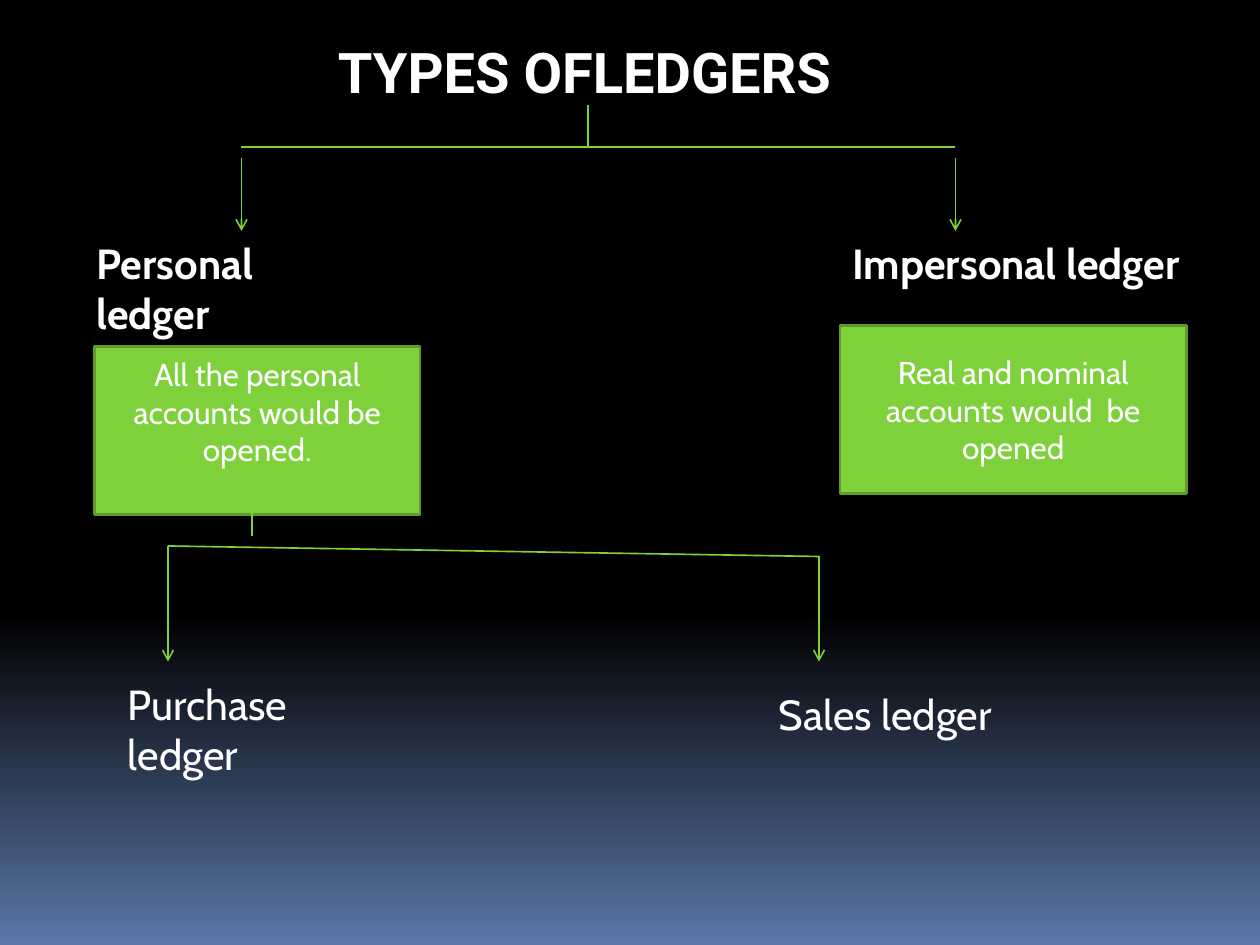
import pptx
import pptx.dml.color
import pptx.enum.shapes
import pptx.enum.text
import pptx.oxml.ns
import pptx.util
from lxml import etree

COLORS = {
    "night": "000000",
    "dusk": "5B77A8",
    "text": "FFFFFF",
    "green": "7FD13B",
    "edge": "5E9B2C",
}
COLUMNS, ROWS = 120, 90


def color(name):
    return pptx.dml.color.RGBColor.from_string(COLORS[name])


class LedgerSlide:
    """Draws on one slide; lengths are columns and rows of the grid."""

    def __init__(self, deck):
        self.page = deck.slides.add_slide(deck.slide_layouts[6])
        self.column = deck.slide_width / COLUMNS
        self.row = deck.slide_height / ROWS

    def place(self, *lengths):
        """Turn alternating columns and rows into slide units."""
        units = (self.column, self.row)
        return [round(length * units[i % 2]) for i, length in enumerate(lengths)]

    def background(self):
        fill = self.page.background.fill
        fill.gradient()
        fill.gradient_angle = 270
        stops = ((0.65, "night"), (1, "dusk"))
        for stop, (position, name) in zip(fill.gradient_stops, stops):
            stop.position = position
            stop.color.rgb = color(name)

    def set_text(self, frame, text, size, font="Cabin", bold=False):
        frame.word_wrap = True
        para = frame.paragraphs[0]
        para.text = text
        para.font.name = font
        para.font.size = pptx.util.Pt(size)
        para.font.bold = bold
        para.font.color.rgb = color("text")
        return para

    def label(self, text, area, size=24, **style):
        box = self.page.shapes.add_textbox(*self.place(*area))
        self.set_text(box.text_frame, text, size, **style)
        box.text_frame.auto_size = pptx.enum.text.MSO_AUTO_SIZE.SHAPE_TO_FIT_TEXT

    def note(self, text, area, bottom=0.05):
        box = self.page.shapes.add_shape(
            pptx.enum.shapes.MSO_SHAPE.RECTANGLE, *self.place(*area))
        box.shadow.inherit = False
        box.fill.solid()
        box.fill.fore_color.rgb = color("green")
        box.line.color.rgb = color("edge")
        box.line.width = pptx.util.Pt(1.5)
        frame = box.text_frame
        frame.vertical_anchor = pptx.enum.text.MSO_ANCHOR.MIDDLE
        frame.margin_bottom = pptx.util.Inches(bottom)
        para = self.set_text(frame, text, 18)
        para.alignment = pptx.enum.text.PP_ALIGN.CENTER

    def line(self, *ends, arrow=False):
        line = self.page.shapes.add_connector(
            pptx.enum.shapes.MSO_CONNECTOR.STRAIGHT, *self.place(*ends))
        line.line.color.rgb = color("green")
        line.line.width = pptx.util.Pt(0.94)
        properties = line._element.spPr
        if arrow:
            outline = properties.find(pptx.oxml.ns.qn("a:ln"))
            etree.SubElement(outline, pptx.oxml.ns.qn("a:tailEnd"), type="arrow")
        etree.SubElement(properties, pptx.oxml.ns.qn("a:effectLst"))


def main():
    deck = pptx.Presentation()
    deck.slide_width = pptx.util.Inches(10)
    deck.slide_height = pptx.util.Inches(7.5)
    slide = LedgerSlide(deck)
    slide.background()

    slide.label("TYPES OFLEDGERS", (31, 3, 51, 7.7), size=32, font="Roboto", bold=True)
    slide.label("Personal ledger", (8, 22, 29, 6), bold=True)
    slide.label("Impersonal ledger", (80, 22, 34, 6), bold=True)
    slide.note("All the personal accounts would be opened.", (9, 33, 31, 16), bottom=0.35)
    slide.note("Real and nominal accounts would  be opened", (80, 31, 33, 16))
    slide.label("Purchase ledger", (11, 64, 22, 10.9))
    slide.label("Sales ledger", (73, 65, 24, 6))

    slide.line(56, 10, 56, 14)
    slide.line(23, 14, 91, 14)
    slide.line(24, 47, 24, 51)
    slide.line(16, 52, 78, 53)
    for column, top, bottom in ((23, 15, 22), (91, 15, 22), (16, 52, 63), (78, 53, 63)):
        slide.line(column, top, column, bottom, arrow=True)

    deck.save("out.pptx")


if __name__ == "__main__":
    main()
